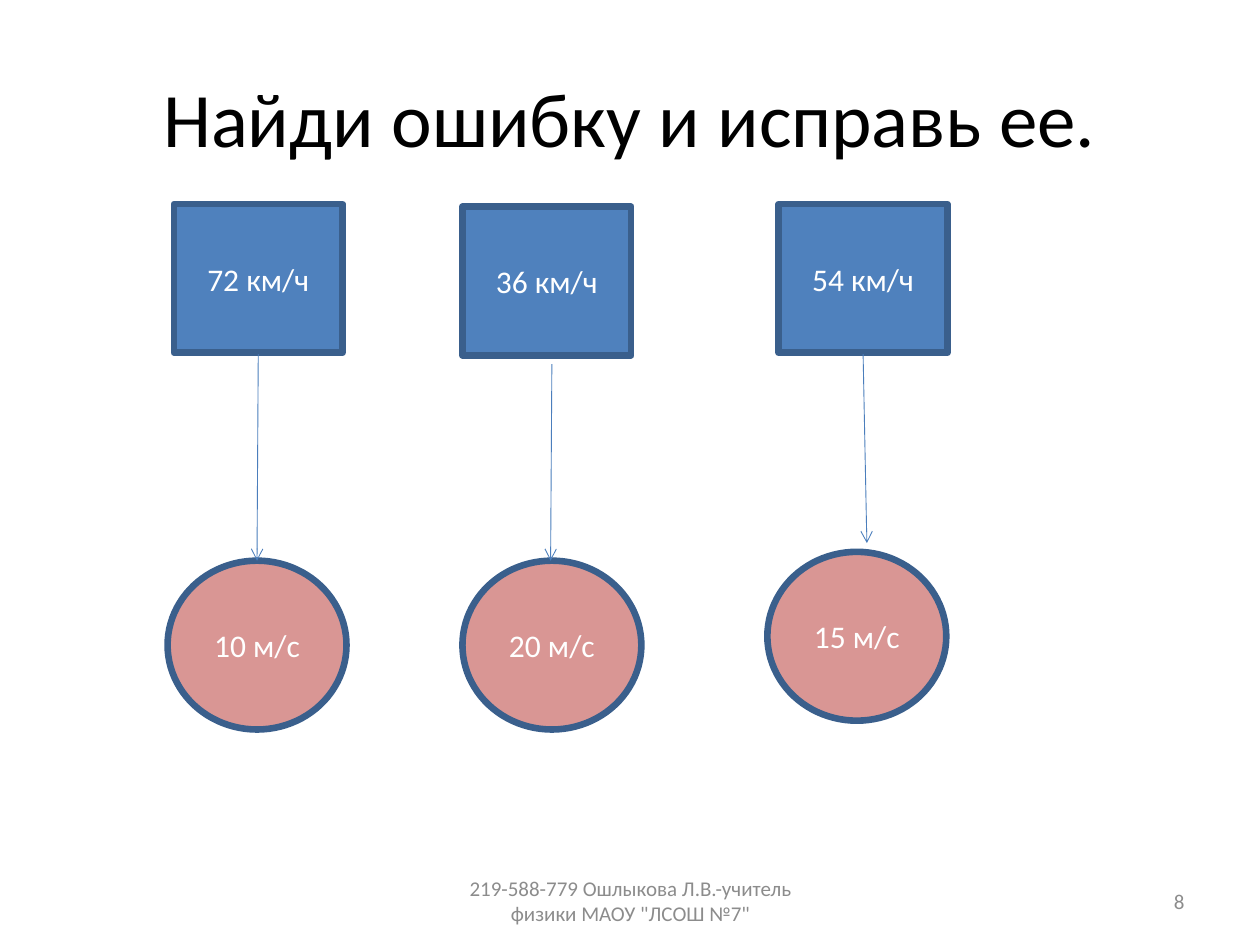
import pptx
import pptx.util
import pptx.dml.color
import pptx.enum.shapes
import pptx.enum.text
import pptx.oxml
import pptx.oxml.ns

Inches, Pt = pptx.util.Inches, pptx.util.Pt
Shape = pptx.enum.shapes.MSO_SHAPE
Align = pptx.enum.text.PP_ALIGN

# Content
TITLE = "Найди ошибку и исправь ее."
FOOTER = '219-588-779 Ошлыкова Л.В.-учитель физики МАОУ "ЛСОШ №7"'
NUMBER = "8"
COLORS = {"box": "4F81BD", "ball": "D99694", "edge": "3A5F8C",
          "arrow": "4B7EBC", "title": "000000", "label": "FFFFFF",
          "note": "8C8C8C"}
BOX, BALL = (1.34, 1.18), (1.42, 1.34)
# Each column: speed and its corner, answer and its corner, arrow ends
COLUMNS = [
    ("72 км/ч", (1.38, 1.62), "10 м/с", (1.33, 4.45), (2.05, 2.81), (2.04, 4.45)),
    ("36 км/ч", (3.67, 1.64), "20 м/с", (3.67, 4.45), (4.38, 2.89), (4.37, 4.45)),
    ("54 км/ч", (6.18, 1.62), "15 м/с", (6.09, 4.38), (6.85, 2.81), (6.88, 4.31)),
]
NOTES = [(FOOTER, 3.42, 3.17, Align.CENTER), (NUMBER, 7.17, 2.33, Align.RIGHT)]


def color(name):
    return pptx.dml.color.RGBColor.from_string(COLORS[name])


def write(shape, text, size, tint, align=Align.CENTER):
    frame = shape.text_frame
    frame.text = text
    frame.word_wrap = True
    frame.vertical_anchor = pptx.enum.text.MSO_ANCHOR.MIDDLE
    para = frame.paragraphs[0]
    para.alignment = align
    para.font.name = "Calibri"
    para.font.size = Pt(size)
    para.font.color.rgb = color(tint)


def node(slide, kind, corner, size, fill, text):
    shape = slide.shapes.add_shape(kind, *map(Inches, corner + size))
    shape.shadow.inherit = False
    shape.fill.solid()
    shape.fill.fore_color.rgb = color(fill)
    shape.line.color.rgb = color("edge")
    shape.line.width = Pt(3.78)
    write(shape, text, 18, "label")


def arrow(slide, start, end):
    line = slide.shapes.add_connector(
        pptx.enum.shapes.MSO_CONNECTOR.STRAIGHT, *map(Inches, start + end))
    line.line.color.rgb = color("arrow")
    line.line.width = Pt(0.5)
    space = pptx.oxml.ns.nsdecls("a")
    tip = pptx.oxml.parse_xml(f'<a:tailEnd {space} type="arrow"/>')
    line.line._get_or_add_ln().append(tip)
    line._element.spPr.append(pptx.oxml.parse_xml(f"<a:effectLst {space}/>"))


def main():
    deck = pptx.Presentation()
    deck.slide_width, deck.slide_height = Inches(10), Inches(7.5)
    slide = deck.slides.add_slide(deck.slide_layouts[5])

    # Title
    title = slide.shapes.title
    title.left, title.top, title.width, title.height = map(Inches, (0.5, 0.3, 9, 1.25))
    write(title, TITLE, 44, "title")

    # Speeds, answers and arrows
    for speed, top, answer, low, start, end in COLUMNS:
        node(slide, Shape.RECTANGLE, top, BOX, "box", speed)
        node(slide, Shape.OVAL, low, BALL, "ball", answer)
        arrow(slide, start, end)

    # Footer and slide number
    for text, left, width, align in NOTES:
        note = slide.shapes.add_textbox(*map(Inches, (left, 6.95, width, 0.4)))
        write(note, text, 12, "note", align)

    deck.save("out.pptx")


if __name__ == "__main__":
    main()
